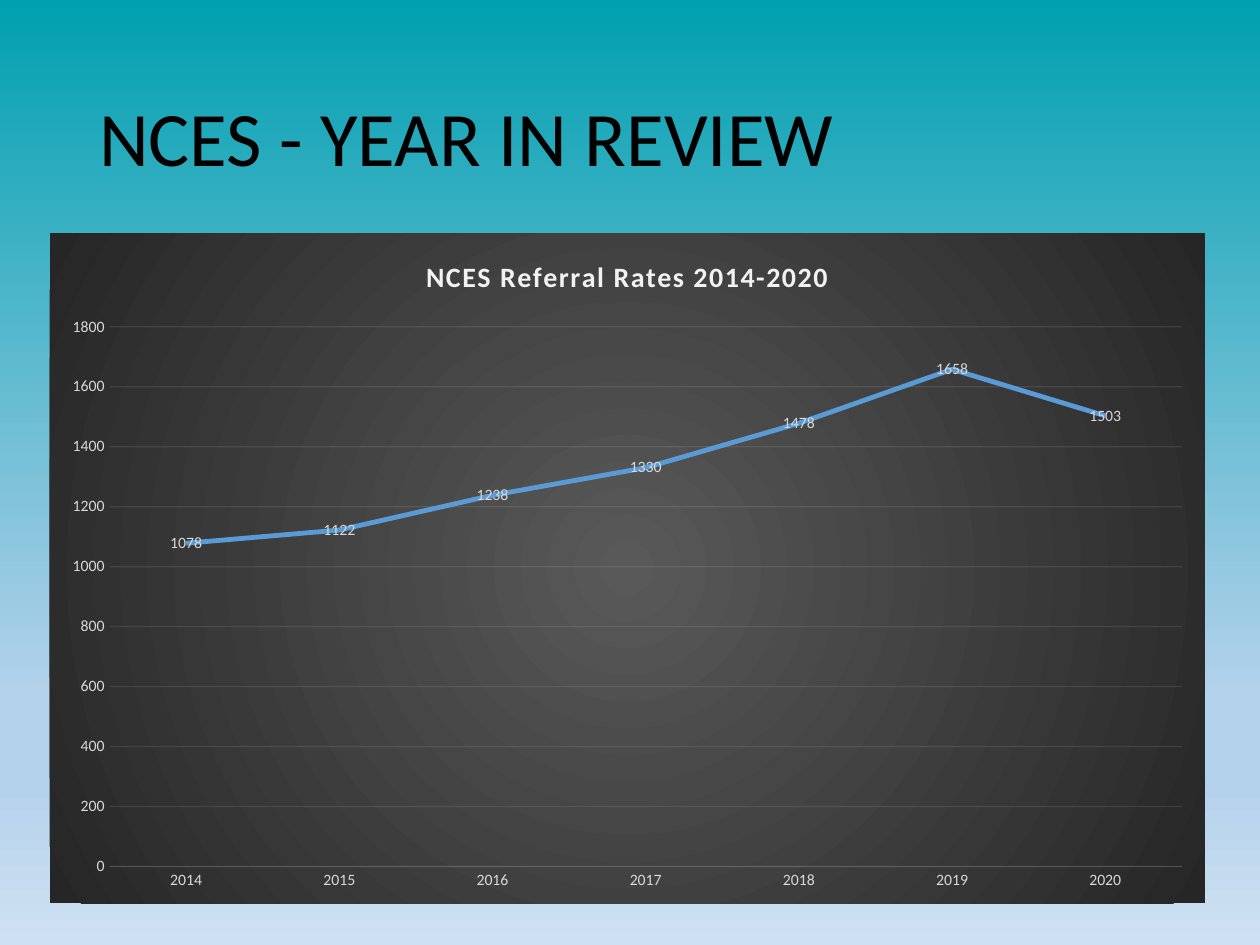
from lxml import etree
from pptx import Presentation
from pptx.chart.data import CategoryChartData
from pptx.dml.color import RGBColor
from pptx.enum.chart import XL_CHART_TYPE, XL_LABEL_POSITION, XL_MARKER_STYLE, XL_TICK_MARK
from pptx.enum.text import MSO_ANCHOR
from pptx.oxml import parse_xml
from pptx.oxml.ns import nsdecls, qn
from pptx.util import Cm, Pt

LINE_CHART = XL_CHART_TYPE.LINE
CENTER = XL_LABEL_POSITION.CENTER
NO_MARKER = XL_MARKER_STYLE.NONE
NO_TICK = XL_TICK_MARK.NONE
MIDDLE = MSO_ANCHOR.MIDDLE

FONT = "Calibri"
LABEL_COLOR = "D9D9D9"
PALE = "F2F2F2"
SERIES_BLUE = "5B9BD5"
LINEAR_DOWN = '<a:lin ang="5400000" scaled="0"/>'
CIRCLE_FROM_CENTER = ('<a:path path="circle">'
                      '<a:fillToRect l="50000" t="50000" r="50000" b="50000"/></a:path>')

REFERRALS = {"2014": 1078, "2015": 1122, "2016": 1238, "2017": 1330,
             "2018": 1478, "2019": 1658, "2020": 1503}


def rgb(value):
    return RGBColor.from_string(value)


def style_font(font, size, color, bold=False):
    font.name = FONT
    font.size = Pt(size)
    font.bold = bold
    font.color.rgb = rgb(color)


def gradient_fill(stops, direction):
    """Return a gradFill element for (percent, colour) stops."""
    stop_xml = "".join(
        f'<a:gs pos="{percent * 1000}"><a:srgbClr val="{color}"/></a:gs>'
        for percent, color in stops)
    return parse_xml(f'<a:gradFill {nsdecls("a")} rotWithShape="1">'
                     f'<a:gsLst>{stop_xml}</a:gsLst>{direction}</a:gradFill>')


def paint_background(slide):
    slide.background.fill.solid()
    solid = slide.background._cSld.find(".//" + qn("a:solidFill"))
    stops = [(0, "00A0B0"), (74, "B5D2EC"), (83, "B5D2EC"), (100, "CEE1F2")]
    solid.getparent().replace(solid, gradient_fill(stops, LINEAR_DOWN))


def add_heading(slide, text):
    box = slide.shapes.add_textbox(Cm(1.75), Cm(1.02), Cm(21.9), Cm(3.68))
    frame = box.text_frame
    frame.word_wrap = True
    frame.vertical_anchor = MIDDLE
    frame.text = text
    para = frame.paragraphs[0]
    para.line_spacing = 0.9
    style_font(para.runs[0].font, 44, "000000")


def faint_line(line):
    """Give a line the pale colour at ten percent opacity."""
    line.width = Pt(0.75)
    line.color.rgb = rgb(PALE)
    color = line._get_or_add_ln().find(".//" + qn("a:srgbClr"))
    etree.SubElement(color, qn("a:alpha")).set("val", "10000")


def style_axis(axis):
    axis.major_tick_mark = NO_TICK
    axis.minor_tick_mark = NO_TICK
    style_font(axis.tick_labels.font, 9, LABEL_COLOR)


def fill_chart_area(chart):
    area = parse_xml(f'<c:spPr {nsdecls("c", "a")}><a:ln><a:noFill/></a:ln></c:spPr>')
    area.insert(0, gradient_fill([(0, "595959"), (100, "262626")], CIRCLE_FROM_CENTER))
    chart._chartSpace.find(qn("c:chart")).addnext(area)


def add_title(chart, text):
    chart.has_title = True
    frame = chart.chart_title.text_frame
    frame.text = text
    span = frame.paragraphs[0].runs[0]
    style_font(span.font, 16, PALE, bold=True)
    span.font._element.set("spc", "100")


def style_series(series):
    series.smooth = False
    series.marker.style = NO_MARKER
    series.format.line.width = Pt(2.75)
    series.format.line.color.rgb = rgb(SERIES_BLUE)
    labels = series.data_labels
    labels.show_value = True
    labels.position = CENTER
    style_font(labels.font, 9, LABEL_COLOR)


def add_referral_chart(slide):
    data = CategoryChartData()
    data.categories = list(REFERRALS)
    data.add_series("Series 1", list(REFERRALS.values()))
    chart = slide.shapes.add_chart(
        LINE_CHART, Cm(1), Cm(4.7), Cm(23.29), Cm(13.51), data).chart
    style_font(chart.font, 10, "000000")
    chart.has_legend = False
    add_title(chart, "NCES Referral Rates 2014-2020")
    fill_chart_area(chart)

    years, counts = chart.category_axis, chart.value_axis
    style_axis(years)
    faint_line(years.format.line)
    style_axis(counts)
    counts.format.line.fill.background()
    counts.minimum_scale = 0
    counts.maximum_scale = 1800
    counts.major_unit = 200
    faint_line(counts.major_gridlines.format.line)

    chart.plots[0].vary_by_categories = False
    style_series(chart.plots[0].series[0])


def main():
    deck = Presentation()
    deck.slide_width, deck.slide_height = Cm(25.4), Cm(19.05)
    slide = deck.slides.add_slide(deck.slide_layouts[6])
    paint_background(slide)
    add_heading(slide, "NCES - YEAR IN REVIEW")
    add_referral_chart(slide)
    deck.save("out.pptx")


if __name__ == "__main__":
    main()
